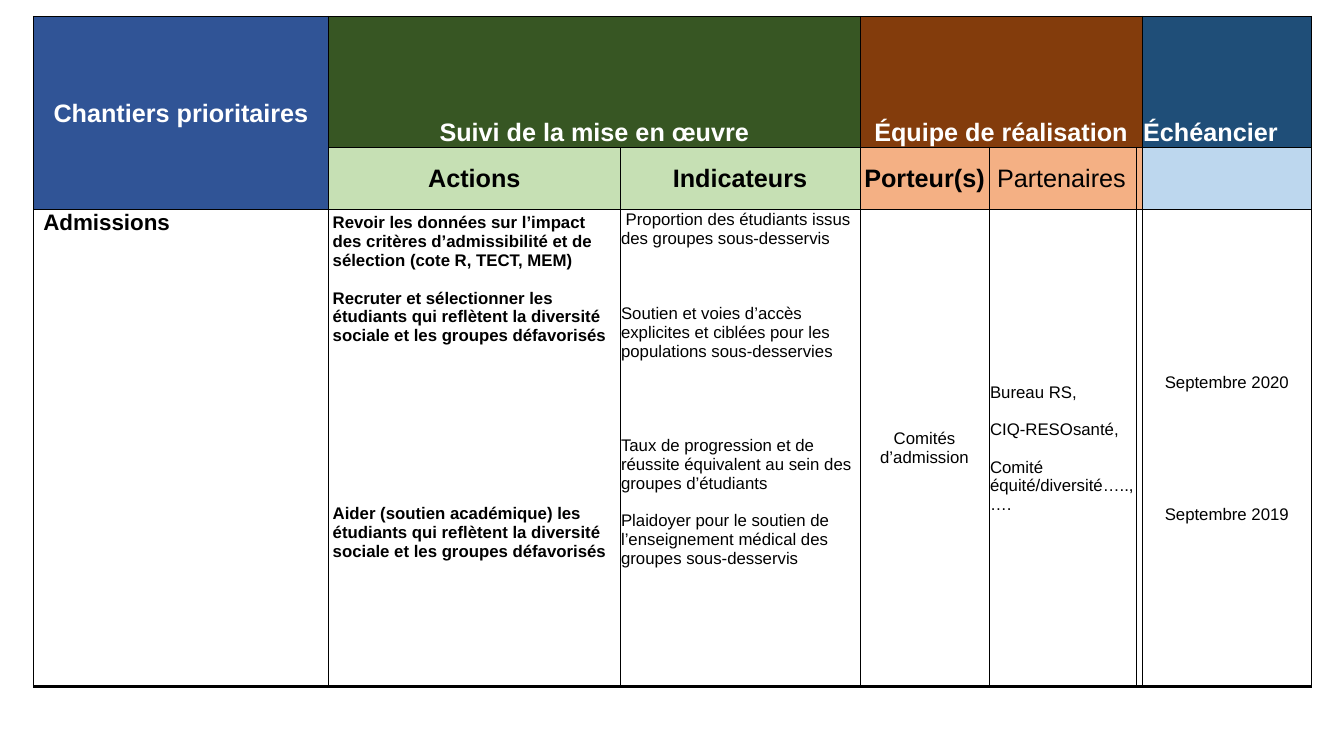
from dataclasses import dataclass

from lxml import etree
from pptx import Presentation
from pptx.dml.color import RGBColor
from pptx.enum.text import MSO_ANCHOR, PP_ALIGN
from pptx.oxml.ns import qn
from pptx.table import Table, _Cell
from pptx.util import Inches, Pt

TOP, MIDDLE, BOTTOM = MSO_ANCHOR.TOP, MSO_ANCHOR.MIDDLE, MSO_ANCHOR.BOTTOM
LEFT, CENTER = PP_ALIGN.LEFT, PP_ALIGN.CENTER

COLORS = {
    "black": "000000", "white": "FFFFFF",
    "blue": "305496", "green": "375623", "brown": "833C0C", "navy": "1F4E78",
    "mint": "C6E0B4", "peach": "F4B084", "sky": "BDD7EE",
}
FONT = "Arial"
COLS = (2.93, 2.89, 2.38, 1.28, 1.46, 0.04, 1.68)
ROWS = (1.3, 0.62, 4.73)
ORIGIN = (0.33, 0.16)
LINE = 13.43  # height of one 12 pt line, in points
PAD = (0.01, 0.01, 0.01, 0)


@dataclass(frozen=True)
class Para:
    text: str
    gap: float = 0  # lines left free above


@dataclass(frozen=True)
class Entry:
    row: int
    col: int
    paras: tuple[Para, ...] = ()
    fill: str = ""
    ink: str = "black"
    size: int = 12
    bold: bool = False
    align: PP_ALIGN = LEFT
    anchor: MSO_ANCHOR = MIDDLE
    pad: tuple[float, ...] = PAD
    span: tuple[int, int] = (1, 1)


def head(row: int, col: int, text: str, fill: str, ink: str = "black",
         bold: bool = True, align: PP_ALIGN = CENTER,
         anchor: MSO_ANCHOR = MIDDLE, span: tuple[int, int] = (1, 1)) -> Entry:
    paras = (Para(text),) if text else ()
    return Entry(row, col, paras, fill, ink, 18, bold, align, anchor, PAD, span)


ENTRIES = (
    head(0, 0, "Chantiers prioritaires", "blue", "white", span=(2, 1)),
    head(0, 1, "Suivi de la mise en œuvre", "green", "white",
         anchor=BOTTOM, span=(1, 2)),
    head(0, 3, "Équipe de réalisation", "brown", "white",
         anchor=BOTTOM, span=(1, 3)),
    head(0, 6, "Échéancier", "navy", "white", align=LEFT, anchor=BOTTOM),
    head(1, 1, "Actions", "mint"),
    head(1, 2, "Indicateurs", "mint"),
    head(1, 3, "Porteur(s)", "peach"),
    head(1, 4, " Partenaires", "peach", bold=False, align=LEFT),
    head(1, 5, "", "peach"),
    head(1, 6, "", "sky"),
    Entry(2, 0, (Para("Admissions"),), size=16, bold=True, anchor=TOP,
          pad=(0.1, 0.01, 0.01, 0)),
    Entry(2, 1, (
        Para("Revoir les données sur l’impact des critères d’admissibilité "
             "et de sélection (cote R, TECT, MEM)"),
        Para("Recruter et sélectionner les étudiants qui reflètent la "
             "diversité sociale et les groupes défavorisés", 1),
        Para("Aider (soutien académique) les étudiants qui reflètent la "
             "diversité sociale et les groupes défavorisés", 8.45),
    ), bold=True, anchor=TOP, pad=(0.04,) * 4),
    Entry(2, 2, (
        Para(" Proportion des étudiants issus des groupes sous-desservis"),
        Para("Soutien et voies d’accès explicites et ciblées pour les "
             "populations sous-desservies", 3),
        Para("Taux de progression et de réussite équivalent au sein des "
             "groupes d’étudiants", 4),
        Para("Plaidoyer pour le soutien de l’enseignement médical des "
             "groupes sous-desservis", 1),
    ), anchor=TOP),
    Entry(2, 3, (Para("Comités d’admission"),), align=CENTER),
    Entry(2, 4, (
        Para("Bureau RS,"),
        Para("CIQ-RESOsanté,", 1),
        Para("Comité équité/diversité….., ….", 1),
    )),
    Entry(2, 5),
    Entry(2, 6, (Para("Septembre 2020"), Para("Septembre 2019", 6)),
          align=CENTER),
)


def rgb(name: str) -> RGBColor:
    return RGBColor.from_string(COLORS[name])


def frame(cell: _Cell, base: float) -> None:
    """Line all four sides of a cell, with its own width for the bottom."""
    props = cell._tc.get_or_add_tcPr()
    for side, width in (("L", 0.5), ("R", 0.5), ("T", 0.5), ("B", base)):
        line = etree.SubElement(props, qn(f"a:ln{side}"), w=str(Pt(width)))
        solid = etree.SubElement(line, qn("a:solidFill"))
        etree.SubElement(solid, qn("a:srgbClr"), val=COLORS["black"])


def write(cell: _Cell, entry: Entry) -> None:
    cell.vertical_anchor = entry.anchor
    (cell.margin_left, cell.margin_top,
     cell.margin_right, cell.margin_bottom) = map(Inches, entry.pad)
    text = cell.text_frame
    for i, item in enumerate(entry.paras):
        para = text.add_paragraph() if i else text.paragraphs[0]
        para.alignment = entry.align
        para.space_before = Pt(round(item.gap * LINE, 1))
        run = para.add_run()
        run.text = item.text
        font = run.font
        font.name, font.size, font.bold = FONT, Pt(entry.size), entry.bold
        font.color.rgb = rgb(entry.ink)


def place(table: Table, entry: Entry) -> None:
    cell = table.cell(entry.row, entry.col)
    rows, cols = entry.span
    if entry.span != (1, 1):
        cell.merge(table.cell(entry.row + rows - 1, entry.col + cols - 1))
    write(cell, entry)
    if entry.fill:
        cell.fill.solid()
        cell.fill.fore_color.rgb = rgb(entry.fill)
    else:
        cell.fill.background()


def main() -> None:
    deck = Presentation()
    deck.slide_width, deck.slide_height = Inches(13.33), Inches(7.5)
    slide = deck.slides.add_slide(deck.slide_layouts[6])
    table = slide.shapes.add_table(
        len(ROWS), len(COLS), *map(Inches, ORIGIN),
        Inches(sum(COLS)), Inches(sum(ROWS))).table
    table.first_row = table.horz_banding = False
    for col, width in zip(table.columns, COLS):
        col.width = Inches(width)
    for i, (row, height) in enumerate(zip(table.rows, ROWS)):
        row.height = Inches(height)
        for cell in row.cells:
            frame(cell, 2 if i == len(ROWS) - 1 else 0.5)
    for entry in ENTRIES:
        place(table, entry)
    deck.save("out.pptx")


if __name__ == "__main__":
    main()
